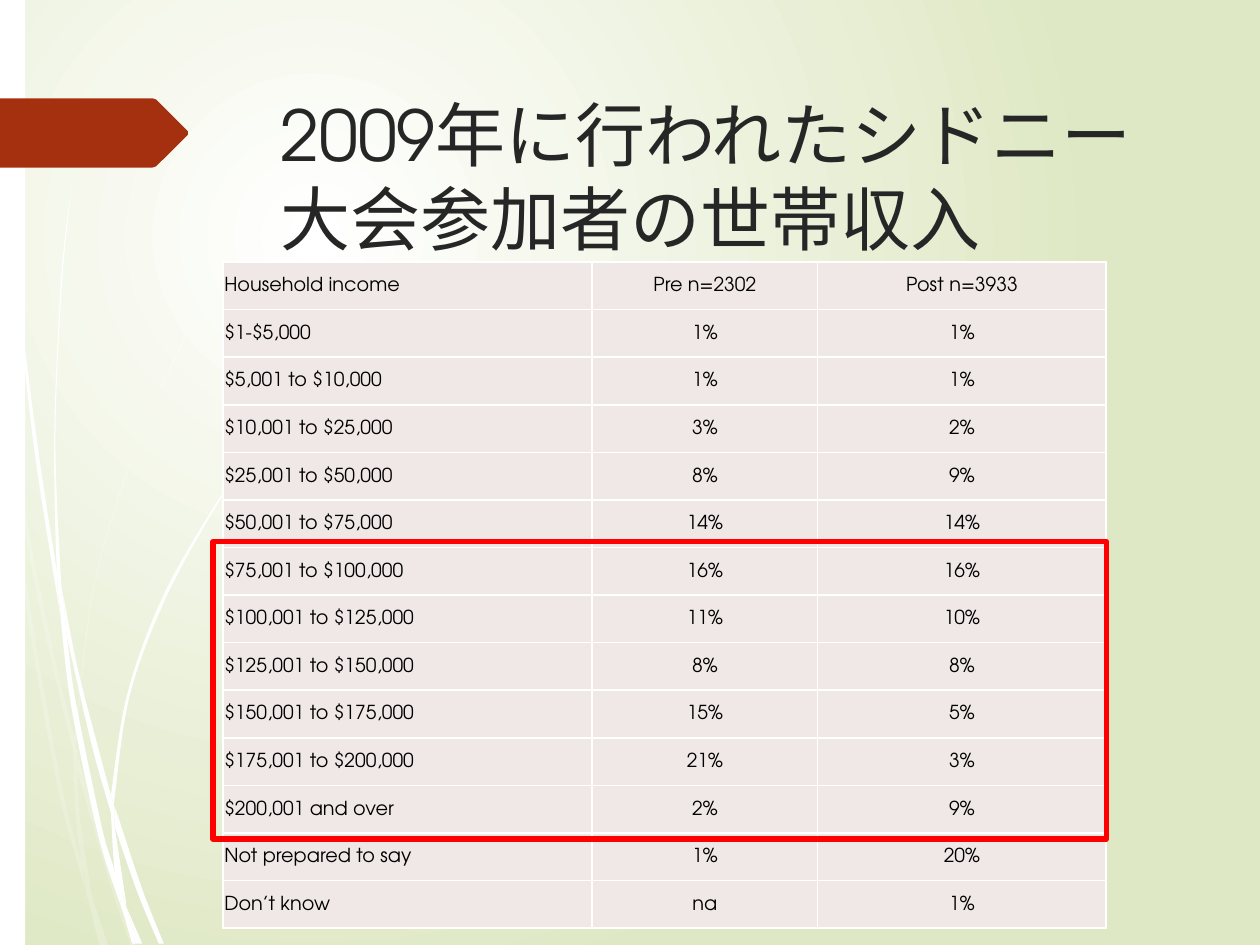
from dataclasses import dataclass

from lxml.etree import SubElement
from pptx import Presentation
from pptx.dml.color import RGBColor as Rgb
from pptx.enum.shapes import MSO_SHAPE as Preset
from pptx.enum.text import MSO_ANCHOR as Anchor, PP_ALIGN as Align
from pptx.oxml.ns import qn
from pptx.util import Pt

EMU_PER_PX = 9144  # 100 px to the inch


@dataclass(frozen=True)
class Theme:
    font: str = "TeX Gyre Adventor"
    title_size: int = 40
    table_size: int = 11
    white: str = "FFFFFF"
    green: str = "DFE8C4"
    rust: str = "A53010"
    title: str = "262626"
    black: str = "000000"
    cell: str = "F0E8E7"
    highlight: str = "FF0000"


# Each grass piece is a list of edges; each edge is a smooth run of points.
FAINT_GRASS = [
    [[(8, 350), (6, 322), (0, 282)], [(0, 299), (7, 344), (8, 350)]],
    [[(10, 345), (25, 433), (43, 520), (59, 586)],
     [(59, 599), (40, 522), (25, 449), (12, 376)]],
    [[(61, 596), (64, 607), (88, 692), (108, 751)], [(104, 751), (85, 694), (61, 610)]],
    [[(83, 751), (86, 751)], [(73, 711)]],
    [[(8, 350), (12, 376), (22, 469), (48, 619), (64, 683), (70, 714)],
     [(64, 693), (45, 621), (19, 470), (8, 350)]],
    [[(58, 599), (60, 646), (64, 683), (67, 692), (73, 711)],
     [(72, 706), (63, 646), (61, 610), (58, 599)]],
    [[(61, 596), (61, 584), (76, 462), (111, 349), (159, 245), (187, 198), (201, 175), (217, 154)],
     [(217, 153), (201, 175), (186, 197), (158, 244), (110, 348), (75, 461), (59, 584), (59, 586)]],
    [[(70, 714), (79, 751)], [(82, 751)]],
    [[(61, 608), (61, 610)], [(61, 596), (59, 586)], [(58, 599)]],
    [[(65, 683), (69, 707), (70, 714), (82, 751)],
     [(83, 751), (73, 711), (67, 692), (65, 683)]],
]
BRIGHT_GRASS = [
    [[(2, 0), (3, 48), (5, 110), (14, 233), (27, 355), (46, 477), (47, 481)],
     [(45, 457), (45, 453), (30, 355), (15, 232), (6, 109), (4, 48), (3, 0)]],
    [[(50, 472), (62, 532), (77, 590), (88, 631)], [(88, 645), (73, 592), (53, 505)]],
    [[(91, 641), (94, 649), (113, 706), (130, 749)], [(126, 749), (109, 708), (91, 656)]],
    [[(47, 477), (53, 505), (60, 556), (81, 657), (91, 691), (96, 717), (97, 722)],
     [(92, 708), (77, 659), (56, 557), (47, 477)]],
    [[(58, 141), (51, 193), (47, 245), (43, 349), (45, 449), (49, 472)],
     [(50, 472), (48, 453), (44, 349), (48, 245), (52, 193), (58, 141)]],
    [[(110, 749), (113, 749)], [(100, 719)]],
    [[(45, 449), (45, 453), (47, 477), (53, 505)], [(50, 472), (49, 472), (45, 449)]],
    [[(91, 641), (91, 633), (103, 552), (131, 476), (169, 406), (191, 374), (203, 359), (216, 344)],
     [(215, 344), (203, 358), (191, 373), (168, 405), (129, 474), (101, 551), (88, 631)]],
    [[(97, 722), (105, 749)], [(108, 749)]],
    [[(88, 645), (91, 691), (96, 706), (100, 719)], [(100, 716), (91, 656), (90, 651), (88, 645)]],
    [[(88, 645), (90, 651), (91, 656)], [(91, 641), (88, 631)]],
    [[(91, 691), (96, 717), (97, 722), (108, 749)],
     [(110, 749), (100, 719), (96, 706), (91, 691)]],
]
ARROW_TAG = [[(0, 78)], [(111, 78)], [(121, 78)], [(124, 79)], [(149, 104)], [(149, 107)],
             [(124, 132)], [(121, 133)], [(111, 133)], [(0, 133)]]

TITLE_LINES = ["2009年に行われたシドニー", "大会参加者の世帯収入"]
INCOME_ROWS = [
    ("Household income", "Pre n=2302", "Post n=3933"),
    ("$1-$5,000", "1%", "1%"),
    ("$5,001 to $10,000", "1%", "1%"),
    ("$10,001 to $25,000", "3%", "2%"),
    ("$25,001 to $50,000", "8%", "9%"),
    ("$50,001 to $75,000", "14%", "14%"),
    ("$75,001 to $100,000", "16%", "16%"),
    ("$100,001 to $125,000", "11%", "10%"),
    ("$125,001 to $150,000", "8%", "8%"),
    ("$150,001 to $175,000", "15%", "5%"),
    ("$175,001 to $200,000", "21%", "3%"),
    ("$200,001 and over", "2%", "9%"),
    ("Not prepared to say", "1%", "20%"),
    ("Don’t know", "na", "1%"),
]


def px(length):
    return round(length * EMU_PER_PX)


def edge_controls(edge):
    """Yield the two Bezier control points of each segment of a smooth edge."""
    padded = [edge[0], *edge, edge[-1]]
    for a, b, c, d in zip(padded, padded[1:], padded[2:], padded[3:]):
        yield ([q + (r - p) / 6 for p, q, r in zip(a, b, c)],
               [r - (s - q) / 6 for q, r, s in zip(b, c, d)])


class SlideBuilder:
    """Draws styled elements on the current slide."""

    def __init__(self, slide, theme):
        self.slide = slide
        self.theme = theme

    def background(self):
        fill = self.slide.background.fill
        fill.gradient()
        for stop, color in zip(fill.gradient_stops, (self.theme.white, self.theme.green)):
            stop.color.rgb = Rgb.from_string(color)
        gradient = next(self.slide.element.iter(qn("a:gradFill")))
        gradient.remove(gradient.find(qn("a:lin")))
        circle = SubElement(gradient, qn("a:path"), path="circle")
        SubElement(circle, qn("a:fillToRect"), l="50000", t="50000", r="100000", b="100000")

    def paint(self, shape, color, opacity=100):
        shape.shadow.inherit = False
        shape.line.fill.background()
        shape.fill.solid()
        shape.fill.fore_color.rgb = Rgb.from_string(color)
        if opacity < 100:
            rgb = shape.fill._xPr.find(".//" + qn("a:srgbClr"))
            SubElement(rgb, qn("a:alpha"), val=str(opacity * 1000))

    def outline(self, edges, color, opacity=100):
        points = [(px(x), px(y)) for edge in edges for x, y in edge]
        builder = self.slide.shapes.build_freeform(*points[0])
        builder.add_line_segments(points[1:], close=True)
        shape = builder.convert_to_shape()
        self.bend(shape, edges)
        self.paint(shape, color, opacity)

    def bend(self, shape, edges):
        """Turn the straight segments within each edge into curves."""
        lines = iter(list(shape.element.iter(qn("a:lnTo"))))
        for index, edge in enumerate(edges):
            if index:
                next(lines)
            for controls in edge_controls(edge):
                line = next(lines)
                line.tag = qn("a:cubicBezTo")
                for position, (x, y) in enumerate(controls):
                    point = SubElement(line, qn("a:pt"), x=str(px(x) - shape.left),
                                       y=str(px(y) - shape.top))
                    line.insert(position, point)

    def rectangle(self, *box):
        return self.slide.shapes.add_shape(Preset.RECTANGLE, *map(px, box))

    def side_band(self, *box):
        self.paint(self.rectangle(*box), self.theme.white)

    def highlight(self, *box):
        shape = self.rectangle(*box)
        shape.shadow.inherit = False
        shape.fill.background()
        shape.line.color.rgb = Rgb.from_string(self.theme.highlight)
        shape.line.width = Pt(3)

    def run(self, paragraph, text, size, color):
        run = paragraph.add_run()
        run.text = text
        run.font.name = self.theme.font
        run.font.size = Pt(size)
        run.font.color.rgb = Rgb.from_string(color)

    def title(self, lines, *box):
        frame = self.slide.shapes.add_textbox(*map(px, box)).text_frame
        frame.word_wrap = True
        paragraph = frame.paragraphs[0]
        for index, line in enumerate(lines):
            if index:
                paragraph.add_line_break()
            self.run(paragraph, line, self.theme.title_size, self.theme.title)

    def cell(self, cell, text, align):
        cell.margin_left = cell.margin_right = cell.margin_top = px(1)
        cell.margin_bottom = 0
        cell.vertical_anchor = Anchor.MIDDLE
        paragraph = cell.text_frame.paragraphs[0]
        paragraph.alignment = align
        self.run(paragraph, text, self.theme.table_size, self.theme.black)
        properties = cell._tc.get_or_add_tcPr()
        for side in ("lnL", "lnR", "lnT", "lnB"):
            border = SubElement(properties, qn(f"a:{side}"), w=str(Pt(1)))
            solid = SubElement(border, qn("a:solidFill"))
            SubElement(solid, qn("a:srgbClr"), val=self.theme.white)
        cell.fill.solid()
        cell.fill.fore_color.rgb = Rgb.from_string(self.theme.cell)

    def table(self, rows, widths, left, top, height):
        box = map(px, (left, top, sum(widths), height))
        table = self.slide.shapes.add_table(len(rows), len(widths), *box).table
        table.first_row = table.horz_banding = False
        for column, width in zip(table.columns, widths):
            column.width = px(width)
        for row, texts in zip(table.rows, rows):
            row.height = px(height / len(rows))
            for index, (cell, text) in enumerate(zip(row.cells, texts)):
                self.cell(cell, text, Align.CENTER if index else Align.LEFT)


def main():
    presentation = Presentation()
    presentation.slide_width, presentation.slide_height = px(1000), px(750)
    theme = Theme()
    builder = SlideBuilder(presentation.slides.add_slide(presentation.slide_layouts[6]), theme)
    builder.background()
    for grass, opacity in ((FAINT_GRASS, 20), (BRIGHT_GRASS, 100)):
        for edges in grass:
            builder.outline(edges, theme.white, opacity)
    builder.side_band(0, 0, 20, 750)
    builder.outline(ARROW_TAG, theme.rust)
    builder.title(TITLE_LINES, 213, 68, 721, 140)
    builder.table(INCOME_ROWS, (293, 179, 229), 177, 208, 529)
    builder.highlight(169, 430, 709, 236)
    presentation.save("out.pptx")


if __name__ == "__main__":
    main()
